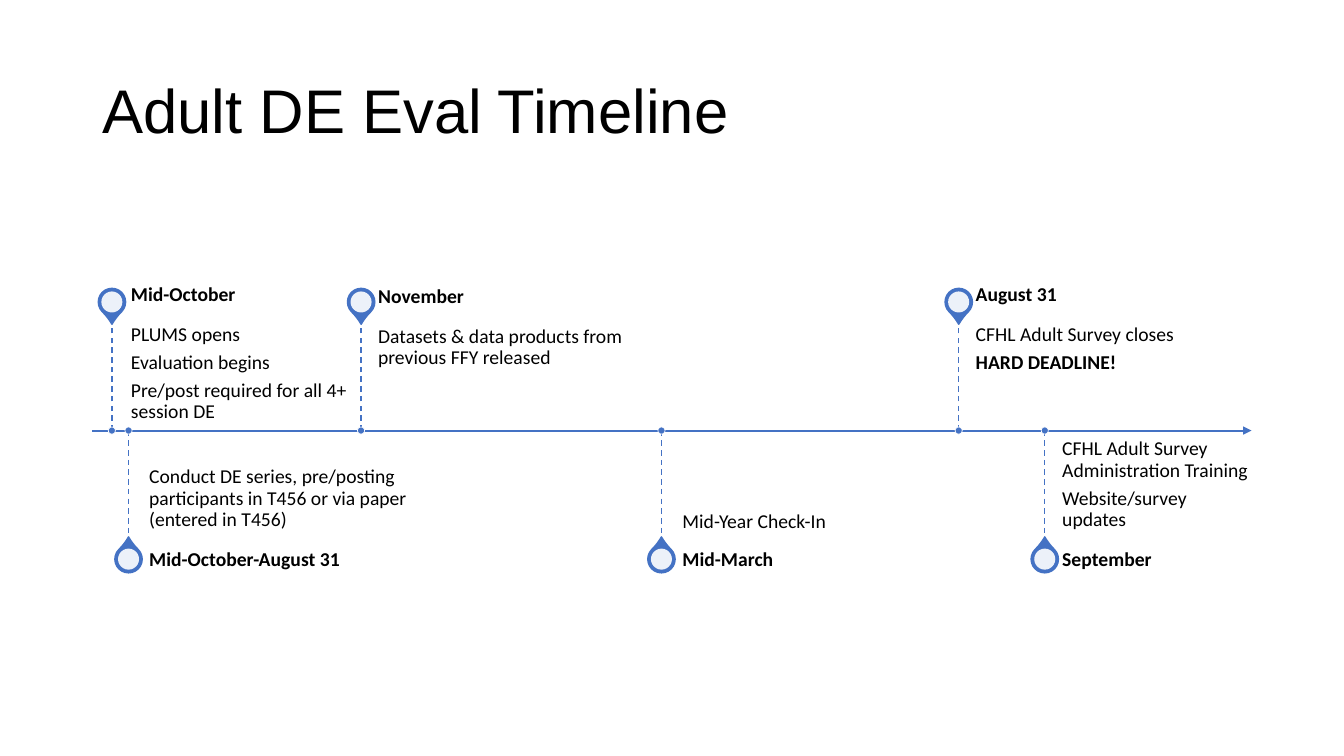
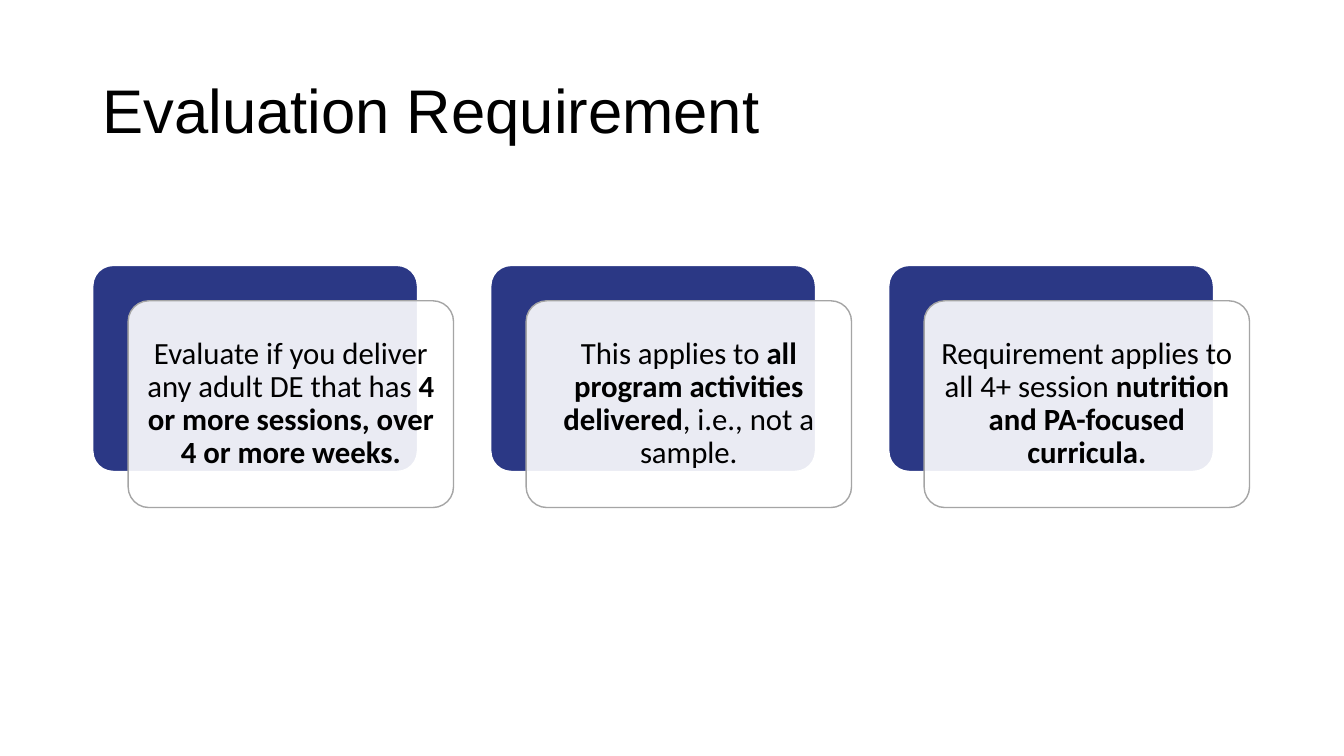
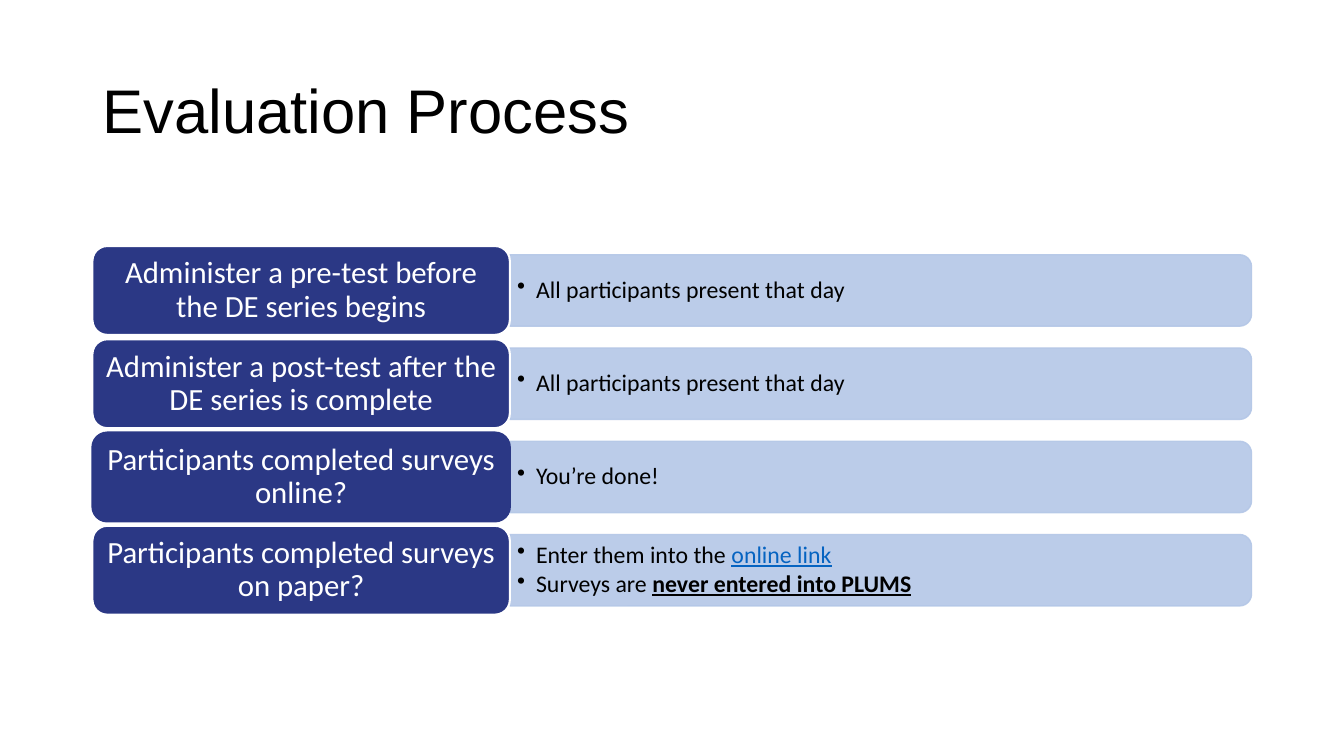
"""Build a three-slide deck on adult evaluation: timeline, requirement and process."""
from dataclasses import dataclass

import pptx
import pptx.dml.color
import pptx.enum.dml
import pptx.enum.shapes
import pptx.enum.text
import pptx.oxml.ns
import pptx.util
from lxml import etree

Cm = pptx.util.Cm
Pt = pptx.util.Pt
Shape = pptx.enum.shapes.MSO_SHAPE
Anchor = pptx.enum.text.MSO_ANCHOR
Align = pptx.enum.text.PP_ALIGN


@dataclass(frozen=True)
class Theme:
    black: str = "000000"
    white: str = "FFFFFF"
    accent: str = "4472C4"
    navy: str = "2B3885"
    pale: str = "B4C7E7"
    grey: str = "A5A5A5"
    link: str = "0563C1"
    title_font: str = "Arial"
    body_font: str = "Calibri"
    title_size: float = 44
    card_size: float = 22
    bullet_size: float = 17
    event_size: float = 14
    left: float = 2.33
    width: float = 29.21
    line_spacing: float = 0.9
    opacity: int = 90


THEME = Theme()


def add_xml(parent, tag, **attributes):
    return etree.SubElement(parent, pptx.oxml.ns.qn(tag), attributes)


def rgb(colour):
    return pptx.dml.color.RGBColor.from_string(colour)


class SlideBuilder:
    def __init__(self, theme):
        self.theme = theme
        self.deck = pptx.Presentation()
        self.deck.slide_width = Cm(33.87)
        self.deck.slide_height = Cm(19.05)
        self.page = None

    def new_page(self, title):
        theme = self.theme
        self.page = self.deck.slides.add_slide(self.deck.slide_layouts[6])
        self.text(theme.left, 1.02, theme.width, 3.68, [title], theme.title_size,
                  font=theme.title_font, insets=(0.25, 0.13, 0.25, 0.13), gap=0)

    def shape(self, kind, left, top, width, height, fill, line=None, weight=1, clear=False, adjust=None, turn=0):
        shape = self.page.shapes.add_shape(kind, Cm(left), Cm(top), Cm(width), Cm(height))
        shape.shadow.inherit = False
        shape.rotation = turn
        if adjust is not None:
            shape.adjustments[0] = adjust
        shape.fill.solid()
        shape.fill.fore_color.rgb = rgb(fill)
        if line:
            shape.line.width = Pt(weight)
            shape.line.color.rgb = rgb(line)
        else:
            shape.line.fill.background()
        if clear:
            for colour in shape._element.spPr.iter(pptx.oxml.ns.qn("a:srgbClr")):
                if colour.get("val") == fill:
                    add_xml(colour, "a:alpha", val=str(self.theme.opacity * 1000))
        return shape

    def line(self, start, end, weight, dashed=False, arrow=False):
        points = [Cm(value) for value in (*start, *end)]
        line = self.page.shapes.add_connector(pptx.enum.shapes.MSO_CONNECTOR.STRAIGHT, *points)
        line.line.color.rgb = rgb(self.theme.accent)
        line.line.width = Pt(weight)
        properties = line._element.spPr
        if dashed:
            line.line.dash_style = pptx.enum.dml.MSO_LINE.DASH
        if arrow:
            add_xml(properties.find(pptx.oxml.ns.qn("a:ln")), "a:tailEnd", type="triangle")
        add_xml(properties, "a:effectLst")

    def text(self, left, top, width, height, paragraphs, size, **style):
        box = self.page.shapes.add_textbox(Cm(left), Cm(top), Cm(width), Cm(height))
        self.fill_text(box, paragraphs, size, **style)

    def fill_text(self, box, paragraphs, size, colour=None, font=None, bold=False, anchor=Anchor.MIDDLE,
                  align=Align.LEFT, insets=(0, 0, 0, 0), gap=0.35, bullet=False):
        theme = self.theme
        frame = box.text_frame
        frame.word_wrap = True
        frame.vertical_anchor = anchor
        frame.margin_left, frame.margin_top, frame.margin_right, frame.margin_bottom = map(Cm, insets)
        for index, spans in enumerate(paragraphs):
            para = frame.paragraphs[0] if index == 0 else frame.add_paragraph()
            para.alignment = align
            para.line_spacing = theme.line_spacing
            para.space_after = Pt(round(size * gap, 1))
            if bullet:
                properties = para._p.get_or_add_pPr()
                properties.set("marL", str(Cm(0.48)))
                properties.set("indent", str(-Cm(0.48)))
                add_xml(properties, "a:buChar", char="•")
            for words, marks in [(spans, "")] if isinstance(spans, str) else spans:
                span = para.add_run()
                span.text = words
                span.font.name = font or theme.body_font
                span.font.size = Pt(size)
                span.font.bold = bold or "bold" in marks
                span.font.underline = "underline" in marks
                span.font.color.rgb = rgb(theme.link if "link" in marks else colour or theme.black)

    def disc(self, x, y, size, fill, **style):
        self.shape(Shape.OVAL, x - size / 2, y - size / 2, size, size, fill, **style)

    def event(self, axis, above, x, text_left, heading, notes, width=6.93, drop=0):
        theme = self.theme
        side = -1 if above else 1
        pin = axis + side * 3.24
        size = 0.69
        self.line((x, axis), (x, axis + side * 2.77), 1, dashed=True)
        self.shape(Shape.TEAR, x - size / 2, pin - size / 2, size, size, theme.accent, theme.accent,
                   adjust=1.15, turn=135 if above else 315)
        self.disc(x, pin, 0.53, theme.white, clear=True)
        self.disc(x, axis, 0.18, theme.accent, line=theme.white, weight=0.5)
        heading_top, notes_top = (6.96 + drop, 7.93 + drop) if above else (axis + 2.77, axis)
        self.text(text_left, heading_top, width, 0.97, [heading], theme.event_size, bold=True,
                  insets=(0, 0, 0.25, 0))
        self.text(text_left, notes_top, width, 2.77, notes, theme.event_size,
                  anchor=Anchor.TOP if above else Anchor.BOTTOM,
                  insets=(0, 0.25, 0.25, 0.38) if above else (0, 0.38, 0, 0.25))

    def card(self, left, top, words):
        theme = self.theme
        size = (8.2, 5.21)
        self.shape(Shape.ROUNDED_RECTANGLE, left, top, *size, theme.navy, theme.white, 1.5, adjust=0.1)
        front = self.shape(Shape.ROUNDED_RECTANGLE, left + 0.9, top + 0.9, *size, theme.white, theme.grey,
                           clear=True, adjust=0.1)
        self.fill_text(front, [words], theme.card_size, align=Align.CENTER, insets=(0.23, 0.23, 0.23, 0.23))

    def step(self, top, label, bullets, border):
        theme = self.theme
        label_width, label_height = 10.52, 2.24
        bar_left = theme.left + label_width
        bar_length, bar_height = theme.width - label_width, 1.8
        middle = top + label_height / 2
        self.shape(Shape.ROUND_2_SAME_RECTANGLE, bar_left + (bar_length - bar_height) / 2,
                   middle - bar_length / 2, bar_height, bar_length, theme.pale, theme.pale,
                   clear=True, turn=90)
        self.text(bar_left, middle - 0.81, 18.62, 1.62, bullets, theme.bullet_size,
                  insets=(0.18, 0.1, 0.18, 0.1), gap=0.15, bullet=True)
        box = self.shape(Shape.ROUNDED_RECTANGLE, theme.left, top, label_width, label_height,
                         theme.navy, border, 1.5)
        self.fill_text(box, [label], theme.card_size, colour=theme.white, align=Align.CENTER,
                       insets=(0.23, 0.12, 0.23, 0.12))


def timeline(builder):
    builder.new_page("Adult DE Eval Timeline")
    axis = 10.85
    left = builder.theme.left
    builder.line((left, axis), (left + builder.theme.width, axis), 1.5, arrow=True)
    builder.event(axis, True, 2.82, 3.3, "Mid-October",
                  ["PLUMS opens", "Evaluation begins", "Pre/post required for all 4+ session DE"])
    builder.event(axis, False, 3.24, 3.76, "Mid-October-August 31",
                  ["Conduct DE series, pre/posting participants in T456 or via paper (entered in T456)"])
    builder.event(axis, True, 9.1, 9.53, "November",
                  ["Datasets & data products from previous FFY released"], drop=0.04)
    builder.event(axis, False, 16.67, 17.2, "Mid-March", ["Mid-Year Check-In"])
    builder.event(axis, True, 24.16, 24.59, "August 31",
                  ["CFHL Adult Survey closes", [("HARD DEADLINE!", "bold")]])
    builder.event(axis, False, 26.33, 26.77, "September",
                  ["CFHL Adult Survey Administration Training", "Website/survey updates"], width=4.78)


def requirement(builder):
    builder.new_page("Evaluation Requirement")
    cards = [
        [("Evaluate if you deliver any adult DE that has ", ""),
         ("4 or more sessions, over 4 or more weeks.", "bold")],
        [("This applies to ", ""), ("all program activities delivered", "bold"), (", i.e., not a sample.", "")],
        [("Requirement applies to all 4+ session ", ""), ("nutrition and PA-focused curricula.", "bold")],
    ]
    for index, words in enumerate(cards):
        builder.card(builder.theme.left + index * 10.03, 6.68, words)


def process(builder):
    builder.new_page("Evaluation Process")
    theme = builder.theme
    present = ["All participants present that day"]
    steps = [
        ("Administer a pre-test before the DE series begins", present, theme.white),
        ("Administer a post-test after the DE series is complete", present, theme.white),
        ("Participants completed surveys online?", ["You’re done!"], theme.navy),
        ("Participants completed surveys on paper?",
         [[("Enter them into the ", ""), ("online link", "link underline")],
          [("Surveys are ", ""), ("never entered into PLUMS", "bold underline")]], theme.white),
    ]
    for index, (label, bullets, border) in enumerate(steps):
        builder.step(6.2 + index * 2.35, label, bullets, border)


def main():
    builder = SlideBuilder(THEME)
    timeline(builder)
    requirement(builder)
    process(builder)
    builder.deck.save("out.pptx")


if __name__ == "__main__":
    main()
